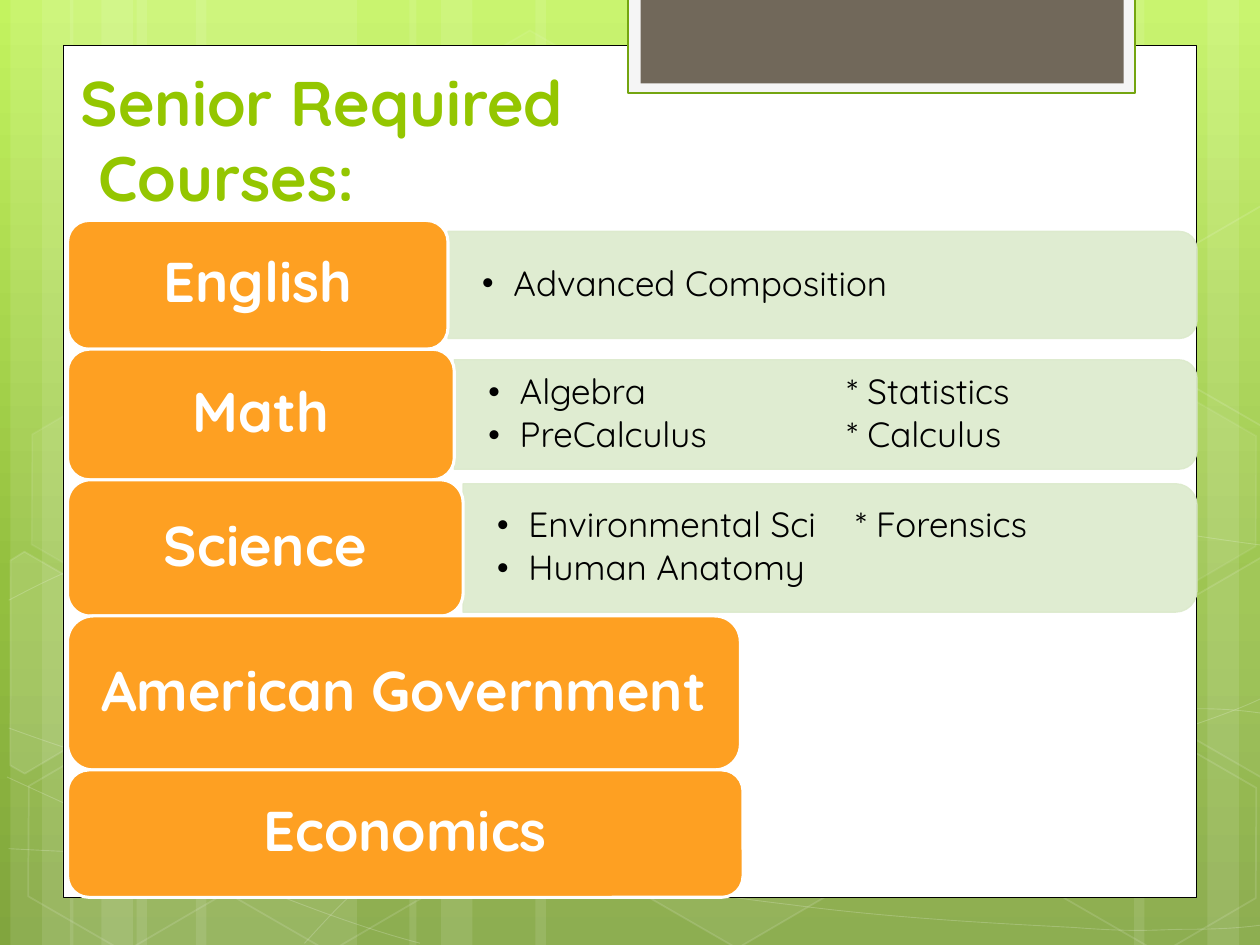
from copy import deepcopy

from lxml import etree
from pptx import Presentation
from pptx.dml.color import RGBColor
from pptx.enum.shapes import MSO_SHAPE
from pptx.enum.text import MSO_ANCHOR, PP_ALIGN
from pptx.oxml.ns import qn
from pptx.util import Pt

RECT, ROUND = MSO_SHAPE.RECTANGLE, MSO_SHAPE.ROUNDED_RECTANGLE
HEXAGON, PANEL = MSO_SHAPE.HEXAGON, MSO_SHAPE.ROUND_2_SAME_RECTANGLE
MIDDLE, BOTTOM = MSO_ANCHOR.MIDDLE, MSO_ANCHOR.BOTTOM
LEFT, CENTER = PP_ALIGN.LEFT, PP_ALIGN.CENTER

W, H = 720, 540
FONT = "Quicksand"
WHITE, BLACK, ORANGE, PALE, LIME = "FFFFFF", "000000", "FEA022", "DCEACC", "94C600"
BACKDROP = [(0, "C3F35F"), (0.62, "93BF3F"), (1, "81A53E")]

STRIPES = [(78, 126), (6, 36), (24, 60), (112, 126), (40, 36), (58, 60),
           (528, 126), (690, 36), (648, 60), (306, 222), (234, 36), (252, 60)]
CURVES = [
    [(5, 485), (44, 487), (83, 489), (137, 488), (191, 487), (258, 486), (330, 479),
     (402, 472), (504, 458), (570, 444), (636, 431), (703, 409), (725, 397)],
    [(5, 343), (26, 332), (47, 321), (87, 310), (128, 300), (186, 284), (250, 279),
     (314, 274), (392, 273), (471, 279), (550, 284), (682, 307), (725, 312)],
    [(4, 444), (91, 484), (178, 523), (240, 539)],
    [(5, 416), (27, 424), (50, 432), (92, 444), (134, 454), (197, 472), (257, 485),
     (317, 497), (392, 510), (452, 517), (512, 525), (576, 528), (614, 530),
     (652, 533), (662, 531), (680, 531), (699, 531), (712, 530), (725, 528)],
    [(174, 539), (187, 525), (200, 510), (217, 498), (235, 485), (259, 470), (279, 460),
     (300, 450), (312, 446), (338, 438), (364, 431), (413, 421), (438, 416),
     (464, 411), (467, 411), (490, 410), (512, 408), (547, 405), (572, 405),
     (597, 404), (638, 405), (638, 405), (654, 405), (670, 405), (686, 405),
     (699, 405), (711, 406), (724, 408)],
]
HEXAGONS = [(240, 26, 4, 8), (358, 424, 6, 12), (8, 426, 0, 12), (10, 225, 7, 8),
            (125, 426, 0, 12), (542, 326, 10, 12), (600, 427, 0, 12), (600, 226, 7, 8)]
LEFT_CUT = [(-23.9, 338.7), (-19.5, 330.4), (44.1, 330.4), (74.8, 385.6),
            (44.1, 440.2), (34.6, 440.2)]
RIGHT_CUT = [(660.3, 374), (691.5, 319.7), (697, 319.7), (757.5, 423.7),
             (754.5, 429), (691.5, 429)]
CUT_HEXAGONS = [(10, LEFT_CUT, 0), (4, RIGHT_CUT, 0), (0, RIGHT_CUT, -200.9)]
FRAMES = [(36, 25.9, 648, 487, WHITE, BLACK, 0.5),
          (359, -1.4, 289.7, 54.7, "F5F5F5", "74A510", 1.25),
          (366.1, -1.4, 276, 49, "71685A", None, 0)]

TITLE = "Senior Required\v Courses:"
COURSES = [
    ("English", 217.4, 73.6, 61.2, ["Advanced Composition"]),
    ("Math", 221, 74.6, 62.6, ["Algebra\t* Statistics", "PreCalculus\t* Calculus"]),
    ("Science", 226, 77.8, 73.4, ["Environmental Sci\t* Forensics", "Human Anatomy"]),
    ("American Government", 384.5, 88, 0, []),
    ("Economics", 386, 72.8, 0, []),
]
LABEL_X, FIRST_Y, PANEL_RIGHT, TAB = 38.6, 126, 684, 205


def rgb(color):
    """Turn a hex string into a colour."""
    return RGBColor.from_string(color)


def paint(s, fill=None, line=None, width=1, fill_alpha=100, line_alpha=100):
    """Set fill, line and their opacity in percent."""
    s.shadow.inherit = False
    if fill:
        s.fill.solid()
        s.fill.fore_color.rgb = rgb(fill)
    else:
        s.fill.background()
    if line:
        s.line.color.rgb = rgb(line)
        s.line.width = Pt(width)
    else:
        s.line.fill.background()
    for where, alpha in (("a:solidFill", fill_alpha), ("a:ln/a:solidFill", line_alpha)):
        steps = "/".join(qn(tag) for tag in (where + "/a:srgbClr").split("/"))
        clr = s._element.spPr.find(steps)
        if clr is not None and alpha < 100:
            etree.SubElement(clr, qn("a:alpha"), val=str(alpha * 1000))


def shape(sp, kind, x, y, w, h, **look):
    """Add a painted preset shape."""
    s = sp.add_shape(kind, Pt(x), Pt(y), Pt(w), Pt(h))
    paint(s, **look)
    return s


def outline(sp, points, close, **look):
    """Add a painted freeform through the points."""
    pts = [(Pt(x), Pt(y)) for x, y in points]
    builder = sp.build_freeform(*pts[0])
    builder.add_line_segments(pts[1:], close=close)
    s = builder.convert_to_shape()
    paint(s, **look)
    return s


def bend(s):
    """Turn each three line segments into one cubic curve."""
    lines = list(s._element.iter(qn("a:lnTo")))
    for i in range(0, len(lines), 3):
        curve = etree.Element(qn("a:cubicBezTo"))
        lines[i].addprevious(curve)
        for line in lines[i:i + 3]:
            curve.append(line[0])
            line.getparent().remove(line)


def write(s, lines, size, color, bold=False, align=LEFT, anchor=MIDDLE,
          margins=(7.2, 3.6), spacing=0.9, after=0):
    """Fill a shape with paragraphs of one style."""
    tf = s.text_frame
    tf.word_wrap = True
    tf.vertical_anchor = anchor
    tf.margin_left = tf.margin_right = Pt(margins[0])
    tf.margin_top = tf.margin_bottom = Pt(margins[1])
    tf.text = "\n".join(lines)
    for p in tf.paragraphs:
        p.alignment, p.line_spacing, p.space_after = align, spacing, Pt(after)
        p.font.name, p.font.size, p.font.bold = FONT, Pt(size), bold
        p.font.color.rgb = rgb(color)
    return tf


def add_bullets(tf):
    """Give each paragraph a hanging bullet and, where used, a tab stop."""
    for p in tf.paragraphs:
        pPr = p._p.get_or_add_pPr()
        pPr.set("marL", str(Pt(18)))
        pPr.set("indent", str(-Pt(18)))
        defaults = pPr.find(qn("a:defRPr"))
        defaults.addprevious(etree.Element(qn("a:buFont"), typeface=FONT))
        defaults.addprevious(etree.Element(qn("a:buChar"), char="•"))
        if "\t" in p.text:
            tabs = etree.Element(qn("a:tabLst"))
            etree.SubElement(tabs, qn("a:tab"), pos=str(Pt(TAB)), algn="l")
            defaults.addprevious(tabs)


def draw_background(slide):
    """Draw the gradient, stripes, curves, hexagons and frames."""
    fill, sp = slide.background.fill, slide.shapes
    fill.gradient()
    fill.gradient_angle = 270
    first = fill.gradient_stops[0]._gs
    first.addnext(deepcopy(first))
    for stop, (position, color) in zip(fill.gradient_stops, BACKDROP):
        stop.position, stop.color.rgb = position, rgb(color)
    for x, w in STRIPES:
        shape(sp, RECT, x, 0, w, H, fill=WHITE, fill_alpha=10)
    for knots in CURVES:
        bend(outline(sp, knots, False, line=WHITE, width=0.5, line_alpha=20))
    for x, y, fill_alpha, line_alpha in HEXAGONS:
        s = shape(sp, HEXAGON, x, y, 126, 109.4, fill=WHITE if fill_alpha else None,
                  line=WHITE, fill_alpha=fill_alpha, line_alpha=line_alpha)
        s.rotation = 30
        s.adjustments[0], s.adjustments[1] = 0.285, 1.155
    for alpha, points, dy in CUT_HEXAGONS:
        s = outline(sp, [(x, y + dy) for x, y in points], True, line=WHITE, line_alpha=12,
                    fill=WHITE if alpha else None, fill_alpha=alpha)
        s.rotation = 30
    for x, y, w, h, fill, line, width in FRAMES:
        shape(sp, RECT, x, y, w, h, fill=fill, line=line, width=width)


def draw_courses(sp):
    """Stack the course labels with their panels."""
    y = FIRST_Y
    for name, w, h, panel_h, items in COURSES:
        if items:
            x, mid = LABEL_X + w, y + h / 2
            panel_w = PANEL_RIGHT - x
            s = shape(sp, PANEL, x + (panel_w - panel_h) / 2, mid - panel_w / 2,
                      panel_h, panel_w, fill=PALE, line=PALE, width=0.75,
                      fill_alpha=90, line_alpha=90)
            s.rotation = 90
            box_h = panel_h - 6
            box = sp.add_textbox(Pt(x), Pt(mid - box_h / 2), Pt(panel_w - 4), Pt(box_h))
            add_bullets(write(box, items, 20, BLACK, margins=(19.4, 10), after=3))
        label = shape(sp, ROUND, LABEL_X, y, w, h, fill=ORANGE, line=WHITE, width=1.75)
        write(label, [name], 32, WHITE, bold=True, align=CENTER, margins=(13, 8.6))
        y += h


def main():
    """Build and save the slide."""
    prs = Presentation()
    prs.slide_width, prs.slide_height = Pt(W), Pt(H)
    slide = prs.slides.add_slide(prs.slide_layouts[6])
    draw_background(slide)
    title = slide.shapes.add_textbox(Pt(38.9), Pt(38.9), Pt(596.9), Pt(87.1))
    write(title, [TITLE], 36, LIME, bold=True, anchor=BOTTOM, spacing=1)
    draw_courses(slide.shapes)
    prs.save("out.pptx")


if __name__ == "__main__":
    main()
